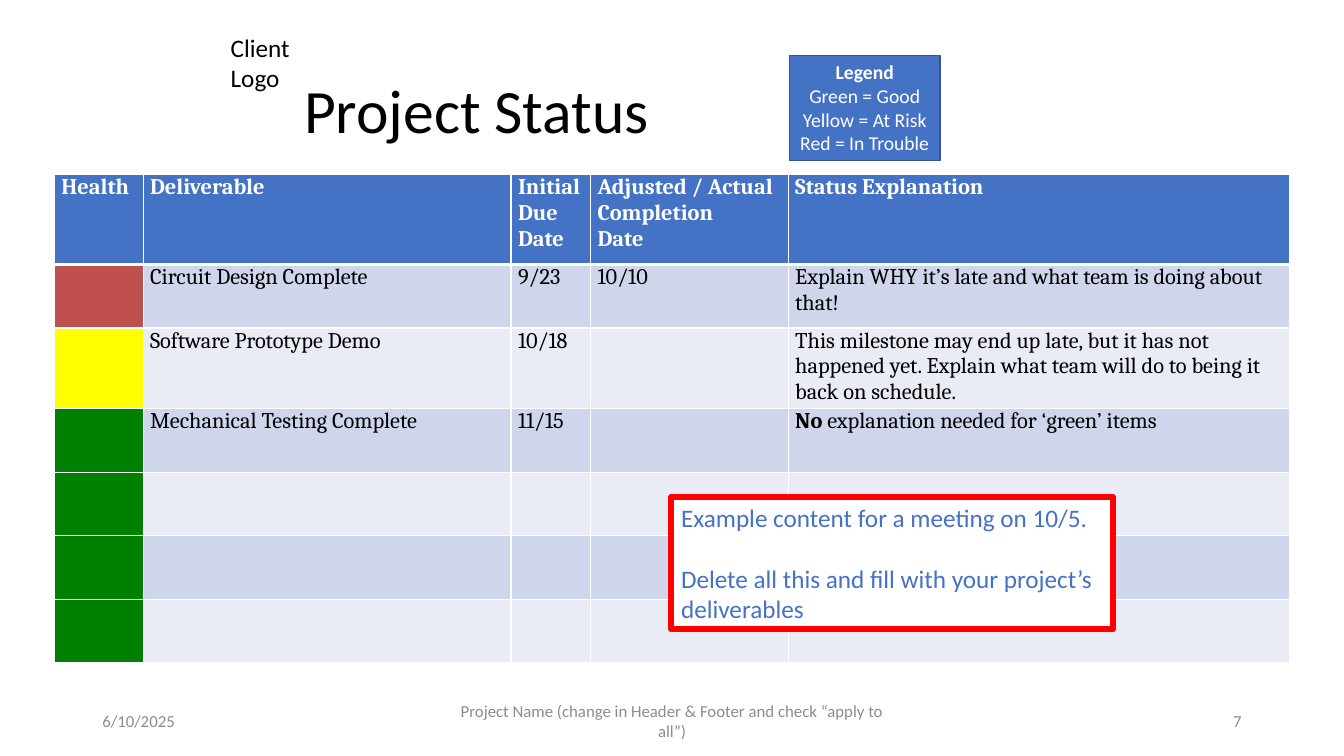
from dataclasses import dataclass

from lxml import etree
from pptx import Presentation
from pptx import util as u
from pptx.dml import color
from pptx.enum import shapes, text
from pptx.oxml import ns


@dataclass(frozen=True)
class Theme:
    sans: str = "Calibri"
    serif: str = "Cambria"
    ink: str = "000000"
    white: str = "FFFFFF"
    blue: str = "4472C4"
    edge: str = "325491"
    grey: str = "8C8C8C"
    red: str = "FF0000"
    bands: tuple = ("CFD5EA", "E9EBF5")
    late: str = "C0504D"
    risk: str = "FFFF00"
    good: str = "008000"
    title: int = 44
    body: int = 18
    cell: int = 16
    key: int = 14
    foot: int = 12


def rgb(code):
    return color.RGBColor.from_string(code)


def write(frame, lines, font="Calibri", size=18, ink="000000", bold=False,
          align=text.PP_ALIGN.LEFT, gap=0):
    for i, line in enumerate(lines):
        para = frame.paragraphs[0] if i == 0 else frame.add_paragraph()
        para.alignment = align
        if i and gap:
            para.space_before = u.Pt(gap)
        for j, part in enumerate(line.split("**")):
            if part:
                run = para.add_run()
                run.text = part
                run.font.name = font
                run.font.size = u.Pt(size)
                run.font.bold = bold or j % 2 == 1
                run.font.color.rgb = rgb(ink)


class Deck:
    """Draws styled elements on a slide with a grid of 160 columns by 90 rows."""

    def __init__(self, theme):
        self.theme = theme
        self.file = Presentation()
        self.file.slide_width = u.Inches(13.33)
        self.file.slide_height = u.Inches(7.5)
        self.slide = self.file.slides.add_slide(self.file.slide_layouts[5])

    def col(self, n):
        return round(self.file.slide_width * n / 160)

    def row(self, n):
        return round(self.file.slide_height * n / 90)

    def place(self, x, y, w, h):
        return self.col(x), self.row(y), self.col(w), self.row(h)

    def title(self, line, spot, inset):
        box = self.slide.shapes.title
        box.left, box.top, box.width, box.height = self.place(*spot)
        frame = box.text_frame
        frame.auto_size = text.MSO_AUTO_SIZE.NONE
        frame.vertical_anchor = text.MSO_ANCHOR.MIDDLE
        frame.margin_left = self.col(inset)
        write(frame, [line], size=self.theme.title)
        frame.paragraphs[0].line_spacing = 0.9

    def label(self, lines, spot, anchor=text.MSO_ANCHOR.TOP, **fmt):
        frame = self.slide.shapes.add_textbox(*self.place(*spot)).text_frame
        frame.word_wrap = True
        frame.vertical_anchor = anchor
        write(frame, lines, self.theme.sans, **fmt)

    def panel(self, lines, spot, fill, edge, width, wrap=True, **fmt):
        box = self.slide.shapes.add_shape(
            shapes.MSO_SHAPE.RECTANGLE, *self.place(*spot))
        box.shadow.inherit = False
        box.fill.solid()
        box.fill.fore_color.rgb = rgb(fill)
        box.line.color.rgb = rgb(edge)
        box.line.width = u.Pt(width)
        frame = box.text_frame
        frame.word_wrap = wrap
        frame.auto_size = text.MSO_AUTO_SIZE.SHAPE_TO_FIT_TEXT
        frame.vertical_anchor = text.MSO_ANCHOR.TOP
        write(frame, lines, self.theme.sans, **fmt)

    def border(self, cell, **widths):
        props = cell._tc.get_or_add_tcPr()
        for side, width in widths.items():
            line = etree.SubElement(
                props, ns.qn(f"a:ln{side}"), w=str(u.Pt(width)))
            fill = etree.SubElement(line, ns.qn("a:solidFill"))
            etree.SubElement(fill, ns.qn("a:srgbClr"), val=self.theme.white)

    def table(self, head, rows, x, y, cols, tall, short):
        look = self.theme
        spot = self.place(x, y, sum(cols), tall + short * len(rows))
        grid = self.slide.shapes.add_table(
            len(rows) + 1, len(cols), *spot).table
        for column, width in zip(grid.columns, cols):
            column.width = self.col(width)
        for r, line in enumerate([head] + rows):
            grid.rows[r].height = self.row(short if r else tall)
            for c, words in enumerate(line):
                cell = grid.cell(r, c)
                cell.margin_left = cell.margin_right = u.Inches(0.07)
                cell.margin_top = cell.margin_bottom = 0
                fill = look.bands[(r - 1) % 2] if r else look.blue
                if r and c == 0:
                    fill, words = words, ""
                self.border(cell, L=1, R=1, T=1, B=1 if r else 3)
                cell.fill.solid()
                cell.fill.fore_color.rgb = rgb(fill)
                write(cell.text_frame, words.split("\n"), look.serif,
                      look.cell, look.ink if r else look.white, r == 0)


def main():
    look = Theme()
    deck = Deck(look)
    align = text.PP_ALIGN
    deck.label(["Client", "Logo"], (26.28, 3.24, 13.32, 8.52), size=look.body)
    head = ["Health", "Deliverable", "Initial\nDue\nDate",
            "Adjusted / Actual\nCompletion\nDate", "Status Explanation"]
    rows = [
        [look.late, "Circuit Design Complete", "9/23", "10/10",
         "Explain WHY it’s late and what team is doing about that!"],
        [look.risk, "Software Prototype Demo", "10/18", "",
         "This milestone may end up late, but it has not happened yet. "
         "Explain what team will do to being it back on schedule."],
        [look.good, "Mechanical Testing Complete", "11/15", "",
         "**No** explanation needed for ‘green’ items"],
    ] + [[look.good, "", "", "", ""]] * 3
    deck.table(head, rows, 6.48, 20.8, (10.56, 43.8, 9.48, 23.52, 59.64),
               10.7, 7.56)
    deck.title("Project Status", (11, 4.8, 138, 17.4), 25.2)
    feet = [
        ("6/10/2025", 11, 36, align.LEFT),
        ("Project Name (change in Header & Footer and check “apply to all”)",
         53, 54, align.CENTER),
        ("7", 113, 36, align.RIGHT),
    ]
    for words, x, width, side in feet:
        deck.label([words], (x, 83.4, width, 4.8), text.MSO_ANCHOR.MIDDLE,
                   size=look.foot, ink=look.grey, align=side)
    deck.panel(["**Legend**", "Green = Good", "Yellow = At Risk",
                "Red = In Trouble"], (94, 6.6, 17.9, 12.5),
               look.blue, look.edge, 1, wrap=False, size=look.key,
               ink=look.white, align=align.CENTER)
    deck.panel(["Example content for a meeting on 10/5.",
                "Delete all this and fill with your project’s deliverables"],
               (79.9, 59.2, 52.6, 15.7), look.white, look.red, 4.5,
               size=look.body, ink=look.blue, gap=22)
    deck.file.save("out.pptx")


if __name__ == "__main__":
    main()
